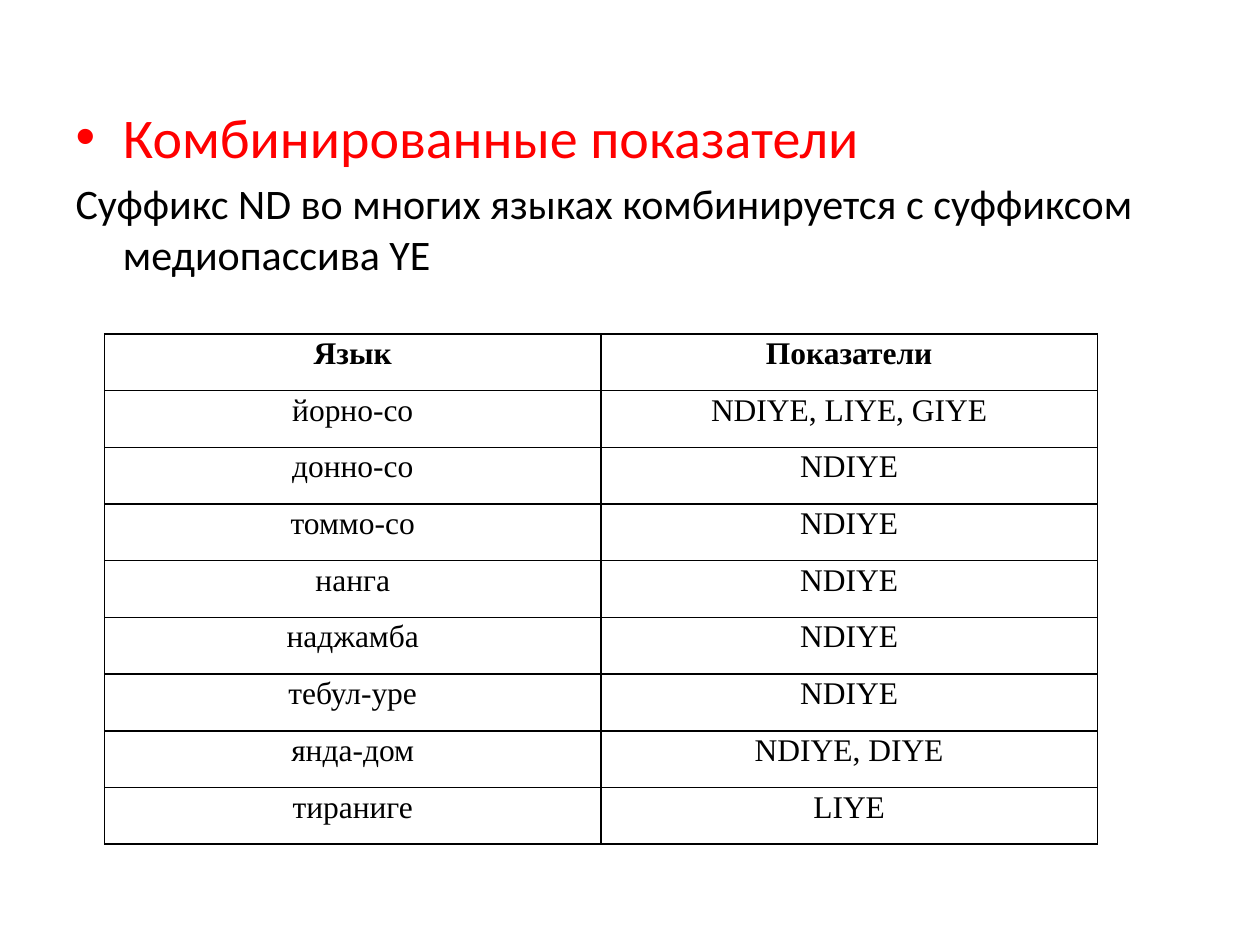
"""Build a slide listing combined suffix markers by language."""
from dataclasses import dataclass

from lxml.etree import SubElement
from pptx import Presentation
from pptx.dml.color import RGBColor
from pptx.enum.text import PP_ALIGN
from pptx.oxml.ns import qn
from pptx.util import Inches, Pt


@dataclass(frozen=True)
class Theme:
    """Colours, fonts and type sizes."""
    accent: RGBColor = RGBColor(255, 0, 0)
    ink: RGBColor = RGBColor(0, 0, 0)
    body_font: str = "Calibri"
    table_font: str = "Times New Roman"
    heading_size: int = 32
    body_size: int = 24
    table_size: int = 18
    border: int = 1


@dataclass(frozen=True)
class Language:
    """A language and its combined markers."""
    name: str
    markers: str


@dataclass(frozen=True)
class Grid:
    """Position and cell size of the table, in inches."""
    left: float = 0.83
    top: float = 2.65
    column: float = 3.94
    row: float = 0.45


THEME = Theme()
GRID = Grid()
HEADER = Language("Язык", "Показатели")
LANGUAGES = [
    Language("йорно-со", "NDIYE, LIYE, GIYE"),
    Language("донно-со", "NDIYE"),
    Language("томмо-со", "NDIYE"),
    Language("нанга", "NDIYE"),
    Language("наджамба", "NDIYE"),
    Language("тебул-уре", "NDIYE"),
    Language("янда-дом", "NDIYE, DIYE"),
    Language("тираниге", "LIYE"),
]


def style(para, font: str, size: int, color: RGBColor, bold: bool = False) -> None:
    """Set the font of a whole paragraph."""
    para.font.name = font
    para.font.size = Pt(size)
    para.font.color.rgb = color
    para.font.bold = bold


def add_borders(cell) -> None:
    """Outline all four sides of a cell."""
    properties = cell._tc.get_or_add_tcPr()
    for position, side in enumerate(("lnL", "lnR", "lnT", "lnB")):
        line = SubElement(properties, qn(f"a:{side}"), w=str(Pt(THEME.border)))
        fill = SubElement(line, qn("a:solidFill"))
        SubElement(fill, qn("a:srgbClr"), val=str(THEME.ink))
        properties.insert(position, line)


def fill_cell(cell, text: str, bold: bool) -> None:
    """Write and format one table cell."""
    cell.text = text
    cell.margin_left = cell.margin_right = Inches(0.07)
    cell.margin_top = cell.margin_bottom = 0
    cell.fill.background()
    add_borders(cell)
    para = cell.text_frame.paragraphs[0]
    para.alignment = PP_ALIGN.CENTER
    para.line_spacing = 1.07
    style(para, THEME.table_font, THEME.table_size, THEME.ink, bold)


def add_language_table(slide, rows: list[Language]) -> None:
    """Draw the languages, header first, on the grid."""
    table = slide.shapes.add_table(
        len(rows), 2, Inches(GRID.left), Inches(GRID.top),
        Inches(2 * GRID.column), Inches(len(rows) * GRID.row)).table
    table.horz_banding = False
    for column in table.columns:
        column.width = Inches(GRID.column)
    for index, language in enumerate(rows):
        table.rows[index].height = Inches(GRID.row)
        for column, text in enumerate((language.name, language.markers)):
            fill_cell(table.cell(index, column), text, language is HEADER)


def fill_body(body) -> None:
    """Place the body and write its heading and explanation."""
    body.left, body.top = Inches(0.5), Inches(0.76)
    body.width, body.height = Inches(9), Inches(5.94)
    heading = body.text_frame.paragraphs[0]
    heading.text = "Комбинированные показатели"
    style(heading, THEME.body_font, THEME.heading_size, THEME.accent)
    detail = body.text_frame.add_paragraph()
    detail.text = "Суффикс ND во многих языках комбинируется с суффиксом медиопассива YE"
    SubElement(detail._p.get_or_add_pPr(), qn("a:buNone"))
    style(detail, THEME.body_font, THEME.body_size, THEME.ink)


def main() -> None:
    """Build and save the deck."""
    deck = Presentation()
    deck.slide_width, deck.slide_height = Inches(10), Inches(7.5)
    slide = deck.slides.add_slide(deck.slide_layouts[1])
    title = slide.shapes.title._element
    title.getparent().remove(title)
    fill_body(slide.placeholders[1])
    add_language_table(slide, [HEADER, *LANGUAGES])
    deck.save("out.pptx")


if __name__ == "__main__":
    main()
